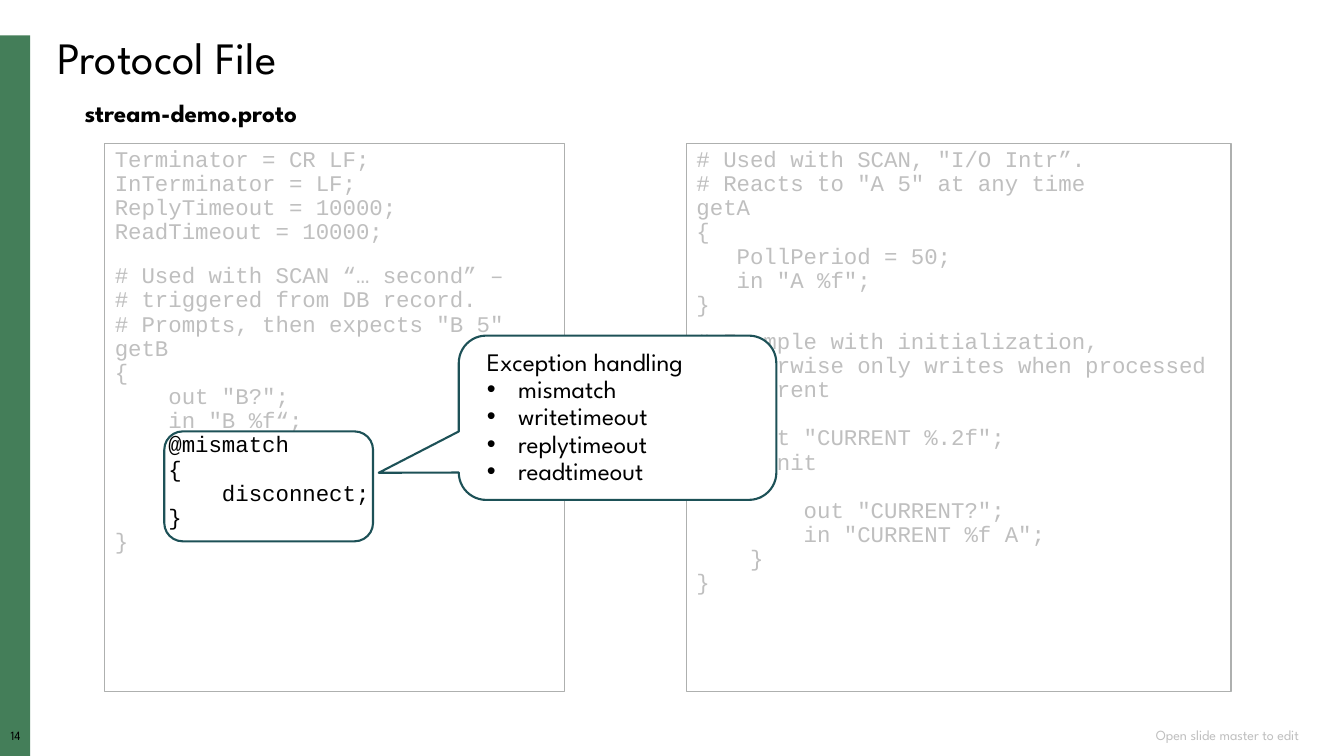
from lxml.etree import SubElement
from pptx import Presentation
from pptx.dml.color import RGBColor
from pptx.enum.shapes import MSO_SHAPE
from pptx.enum.text import MSO_ANCHOR, PP_ALIGN
from pptx.oxml.ns import qn
from pptx.util import Inches, Pt

BLACK = RGBColor(0x00, 0x00, 0x00)
WHITE = RGBColor(0xFF, 0xFF, 0xFF)
GREEN = RGBColor(0x44, 0x7E, 0x59)
TEAL = RGBColor(0x1D, 0x51, 0x57)
FRAME_GREY = RGBColor(0xAE, 0xB0, 0xAF)
FOOTER_GREY = RGBColor(0xBF, 0xBF, 0xBF)
BODY_FONT = "League Spartan"
CODE_FONT = "Courier New"

REQUEST_CODE = [
    """Terminator = CR LF;
InTerminator = LF;
ReplyTimeout = 10000;
ReadTimeout = 10000;""",
    """# Used with SCAN “… second” –
# triggered from DB record.
# Prompts, then expects "B 5"
getB
{
    out "B?";
    in "B %f“;
    @mismatch
    {
        disconnect;
    }
}""",
]
STREAM_CODE = [
    """# Used with SCAN, "I/O Intr”.
# Reacts to "A 5" at any time
getA
{
   PollPeriod = 50;
   in "A %f";
}""",
    """# Example with initialization,
# otherwise only writes when processed
setCurrent
{
    out "CURRENT %.2f";
    @init
    {
        out "CURRENT?";
        in "CURRENT %f A";
    }
}""",
]
EXCEPTIONS = ["mismatch", "writetimeout", "replytimeout", "readtimeout"]


def format_paragraph(paragraph, size, font=BODY_FONT, color=BLACK, align=PP_ALIGN.LEFT, bold=False):
    """Set the font, alignment and line spacing of a paragraph."""
    paragraph.alignment = align
    paragraph.line_spacing = 0.9
    paragraph.font.name = font
    paragraph.font.size = Pt(size)
    paragraph.font.bold = bold
    paragraph.font.color.rgb = color


def add_box(slide, kind, box, fill=None, line=None, width=0.75):
    """Add a shadowless shape with an optional fill and outline."""
    shape = slide.shapes.add_shape(kind, *map(Inches, box))
    shape.shadow.inherit = False
    if fill is None:
        shape.fill.background()
    else:
        shape.fill.solid()
        shape.fill.fore_color.rgb = fill
    if line is None:
        shape.line.fill.background()
    else:
        shape.line.color.rgb = line
        shape.line.width = Pt(width)
    return shape


def add_label(slide, box, text, size, margin=0.1, wrap=True, anchor=MSO_ANCHOR.TOP, **style):
    """Add a one-line text box."""
    frame = slide.shapes.add_textbox(*map(Inches, box)).text_frame
    frame.word_wrap = wrap
    frame.vertical_anchor = anchor
    frame.margin_left = frame.margin_right = Inches(margin)
    frame.margin_top = frame.margin_bottom = Inches(margin / 2)
    frame.text = text
    format_paragraph(frame.paragraphs[0], size, **style)


def add_page_furniture(slide, box):
    """Add the side bar, slide number and footer of the page."""
    left, top, width, height = box
    bottom = top + height
    add_box(slide, MSO_SHAPE.RECTANGLE, (left, top + 0.35, 0.3, height - 0.35), GREEN)
    add_label(slide, (left, bottom - 0.26, 0.31, 0.17), "14", 9, margin=0, align=PP_ALIGN.CENTER)
    add_label(slide, (left + width - 4.57, bottom - 0.3, 4.22, 0.2), "Open slide master to edit", 10,
              anchor=MSO_ANCHOR.MIDDLE, color=FOOTER_GREY, align=PP_ALIGN.RIGHT)


def add_heading(slide, box):
    """Place the title with the file name below it."""
    left, top, width, height = box
    title = slide.shapes.title
    title.left, title.top, title.width, title.height = map(Inches, box)
    title.text_frame.text = "Protocol File"
    title.text_frame.vertical_anchor = MSO_ANCHOR.TOP
    format_paragraph(title.text_frame.paragraphs[0], 32)
    add_label(slide, (left + 0.27, top + 0.65, 2.59, 0.37), "stream-demo.proto", 18, wrap=False, bold=True)


def add_code_panel(slide, box, blocks, gap, veils):
    """Add a framed listing and fade the given areas of it."""
    left, top = box[:2]
    frame = add_box(slide, MSO_SHAPE.RECTANGLE, box, line=FRAME_GREY).text_frame
    frame.word_wrap = True
    frame.vertical_anchor = MSO_ANCHOR.TOP
    for index, block in enumerate(blocks):
        paragraph = frame.add_paragraph() if index else frame.paragraphs[0]
        paragraph.text = block
        format_paragraph(paragraph, 16, CODE_FONT)
        if index:
            paragraph.space_before = Pt(gap)
    for x, y, width, height in veils:
        veil = add_box(slide, MSO_SHAPE.RECTANGLE, (left + x, top + y, width, height), WHITE)
        color = veil.fill._xPr.find(qn("a:solidFill"))[0]
        SubElement(color, qn("a:alpha"), val="75000")


def add_exception_callout(slide, box):
    """Add the callout that lists the exception handlers."""
    callout = add_box(slide, MSO_SHAPE.ROUNDED_RECTANGULAR_CALLOUT, box, WHITE, TEAL, 1.5)
    for index, value in enumerate((-0.752, 0.335, 0.167)):
        callout.adjustments[index] = value
    frame = callout.text_frame
    frame.word_wrap = True
    frame.vertical_anchor = MSO_ANCHOR.MIDDLE
    frame.margin_left = frame.margin_right = Inches(0.2)
    frame.margin_top = frame.margin_bottom = Inches(0.2)
    frame.text = "Exception handling"
    format_paragraph(frame.paragraphs[0], 18)
    for exception in EXCEPTIONS:
        paragraph = frame.add_paragraph()
        paragraph.text = exception
        properties = paragraph._p.get_or_add_pPr()
        properties.set("marL", str(Inches(0.31)))
        properties.set("indent", str(-Inches(0.31)))
        SubElement(properties, qn("a:buFont"), typeface="Arial")
        SubElement(properties, qn("a:buChar"), char="•")
        format_paragraph(paragraph, 18)


def main():
    """Build the slide and save it."""
    presentation = Presentation()
    presentation.slide_width = Inches(13.33)
    presentation.slide_height = Inches(7.5)
    slide = presentation.slides.add_slide(presentation.slide_layouts[5])
    add_page_furniture(slide, (0, 0, 13.33, 7.5))
    add_heading(slide, (0.47, 0.3, 12.5, 0.59))
    add_code_panel(slide, (1.04, 1.42, 4.56, 5.44), REQUEST_CODE, 14,
                   [(0.05, 3.85, 4.31, 1.16), (0.07, 0.08, 4.31, 2.79)])
    add_code_panel(slide, (6.81, 1.42, 5.4, 5.44), STREAM_CODE, 9, [(0.09, 0.06, 5.11, 5.04)])
    add_box(slide, MSO_SHAPE.ROUNDED_RECTANGLE, (1.63, 4.28, 2.07, 1.09), line=TEAL, width=1.5)
    add_exception_callout(slide, (4.55, 3.33, 3.15, 1.63))
    presentation.save("out.pptx")


if __name__ == "__main__":
    main()
